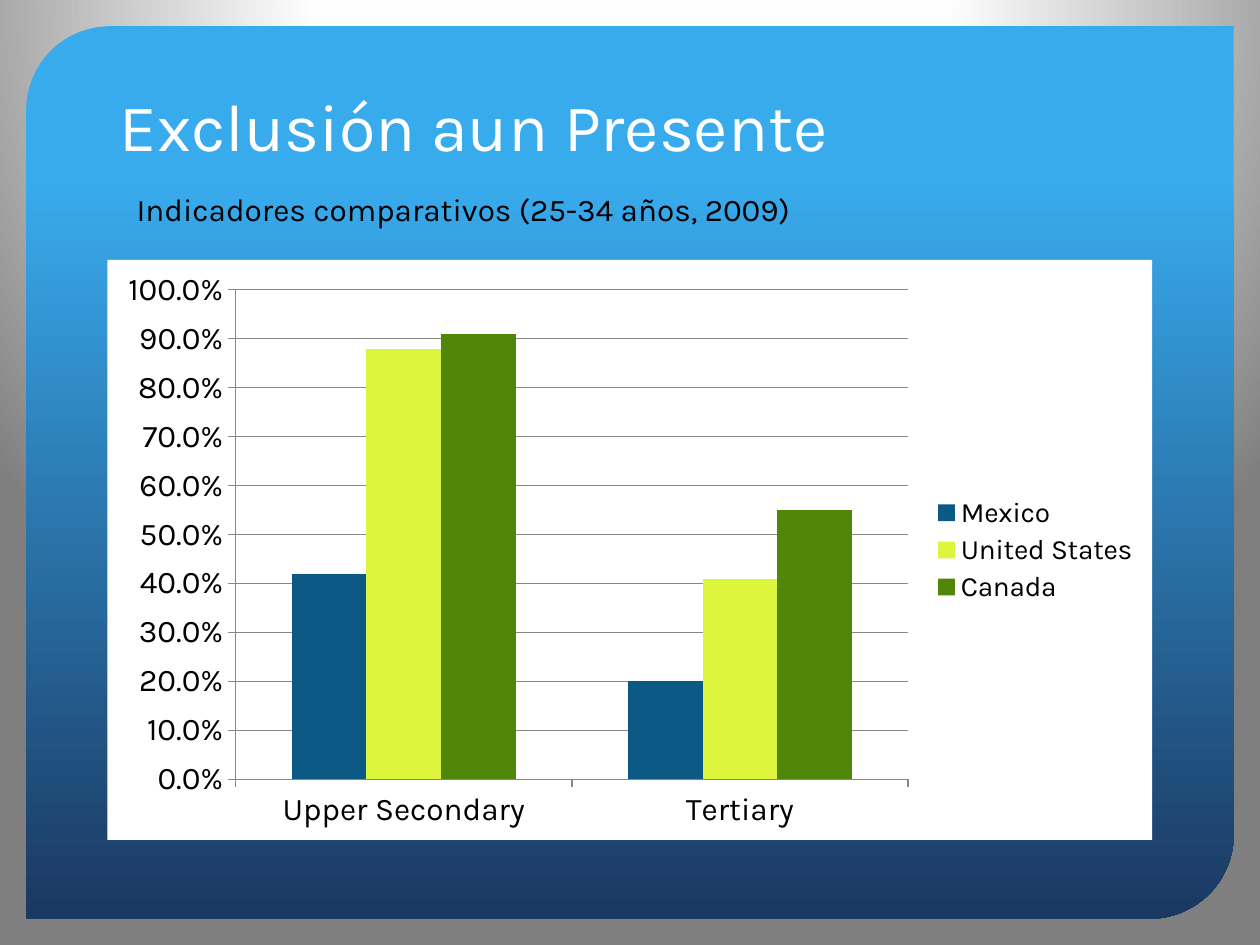
from dataclasses import dataclass

import lxml.etree
import pptx
import pptx.chart.data
import pptx.dml.color
import pptx.enum.chart
import pptx.enum.shapes
import pptx.enum.text
import pptx.oxml.ns
import pptx.util

Pt = pptx.util.Pt
qn = pptx.oxml.ns.qn


@dataclass(frozen=True)
class Theme:
    font: str = "Karla"
    white: str = "FFFFFF"
    black: str = "000000"
    grid: str = "878787"
    backdrop: tuple = ((0, "FFFFFF"), (40, "FEFEFE"), (100, "7F7F7F"))
    panel: tuple = ((17, "38ABED"), (100, "1B3861"))
    series: tuple = ("0C5986", "DDF53D", "508709")
    title_size: int = 38
    body_size: int = 18
    legend_size: int = 16


THEME = Theme()


def color(value):
    return pptx.dml.color.RGBColor.from_string(value)


def style_font(font, size, value):
    font.name = THEME.font
    font.size = Pt(size)
    font.color.rgb = color(value)


def fill_solid(fill, value):
    fill.solid()
    fill.fore_color.rgb = color(value)


def set_gradient(owner, stops):
    gradient = next(owner.iter(qn("a:gradFill")))
    for child in list(gradient):
        gradient.remove(child)
    stop_list = lxml.etree.SubElement(gradient, qn("a:gsLst"))
    for position, value in stops:
        stop = lxml.etree.SubElement(stop_list, qn("a:gs"), pos=str(position * 1000))
        lxml.etree.SubElement(stop, qn("a:srgbClr"), val=value)
    return gradient


def paint_background(page):
    page.background.fill.gradient()
    gradient = set_gradient(page.element, THEME.backdrop)
    circle = lxml.etree.SubElement(gradient, qn("a:path"), path="circle")
    lxml.etree.SubElement(
        circle, qn("a:fillToRect"), l="50000", t="-80000", r="50000", b="180000"
    )


def add_panel(page, box):
    kind = pptx.enum.shapes.MSO_SHAPE.ROUND_2_DIAG_RECTANGLE
    panel = page.shapes.add_shape(kind, *map(Pt, box))
    panel.adjustments[0] = 0.094
    panel.adjustments[1] = 0
    panel.shadow.inherit = False
    panel.line.fill.background()
    panel.fill.gradient()
    gradient = set_gradient(panel.element, THEME.panel)
    lxml.etree.SubElement(gradient, qn("a:lin"), ang="5400000", scaled="0")


def add_text(page, box, text, size, value, anchor):
    frame = page.shapes.add_textbox(*map(Pt, box)).text_frame
    frame.word_wrap = True
    frame.vertical_anchor = anchor
    para = frame.paragraphs[0]
    para.text = text
    style_font(para.font, size, value)


def add_comparison_chart(page, box):
    data = pptx.chart.data.CategoryChartData(number_format="0.0%")
    data.categories = ["Upper Secondary", "Tertiary"]
    data.add_series("Mexico", (0.42, 0.2))
    data.add_series("United States", (0.88, 0.41))
    data.add_series("Canada", (0.91, 0.55))
    kind = pptx.enum.chart.XL_CHART_TYPE.COLUMN_CLUSTERED
    chart = page.shapes.add_chart(kind, *map(Pt, box), data).chart
    style_font(chart.font, THEME.body_size, THEME.black)
    chart.has_title = False

    area = lxml.etree.Element(qn("c:spPr"))
    solid = lxml.etree.SubElement(area, qn("a:solidFill"))
    lxml.etree.SubElement(solid, qn("a:srgbClr"), val=THEME.white)
    chart.element.find(qn("c:chart")).addnext(area)

    plot = chart.plots[0]
    plot.gap_width = 150
    plot.overlap = 0
    plot.vary_by_categories = False
    for series, value in zip(plot.series, THEME.series):
        fill_solid(series.format.fill, value)

    values = chart.value_axis
    values.minimum_scale, values.maximum_scale, values.major_unit = 0, 1, 0.1
    values.has_major_gridlines = True
    values.tick_labels.number_format = "0.0%"
    values.tick_labels.number_format_is_linked = False
    for axis in (chart.category_axis, values):
        axis.major_tick_mark = pptx.enum.chart.XL_TICK_MARK.OUTSIDE
        style_font(axis.tick_labels.font, THEME.body_size, THEME.black)
    for ruled in (chart.category_axis, values, values.major_gridlines):
        ruled.format.line.color.rgb = color(THEME.grid)
        ruled.format.line.width = Pt(0.75)

    chart.has_legend = True
    chart.legend.position = pptx.enum.chart.XL_LEGEND_POSITION.RIGHT
    chart.legend.include_in_layout = False
    style_font(chart.legend.font, THEME.legend_size, THEME.black)


def build_comparison_slide(deck):
    page = deck.slides.add_slide(deck.slide_layouts[6])
    anchors = pptx.enum.text.MSO_ANCHOR
    paint_background(page)
    add_panel(page, (15, 15, 690, 510))
    add_text(page, (61.4, 30.2, 597, 67.7), "Exclusión aun Presente",
             THEME.title_size, THEME.white, anchors.BOTTOM)
    add_comparison_chart(page, (61.4, 148.5, 597, 331.5))
    add_text(page, (71, 105.1, 587.5, 28.8),
             "Indicadores comparativos (25-34 años, 2009)",
             THEME.body_size, THEME.black, anchors.TOP)


def main():
    deck = pptx.Presentation()
    deck.slide_width, deck.slide_height = Pt(720), Pt(540)
    build_comparison_slide(deck)
    deck.save("out.pptx")


if __name__ == "__main__":
    main()
